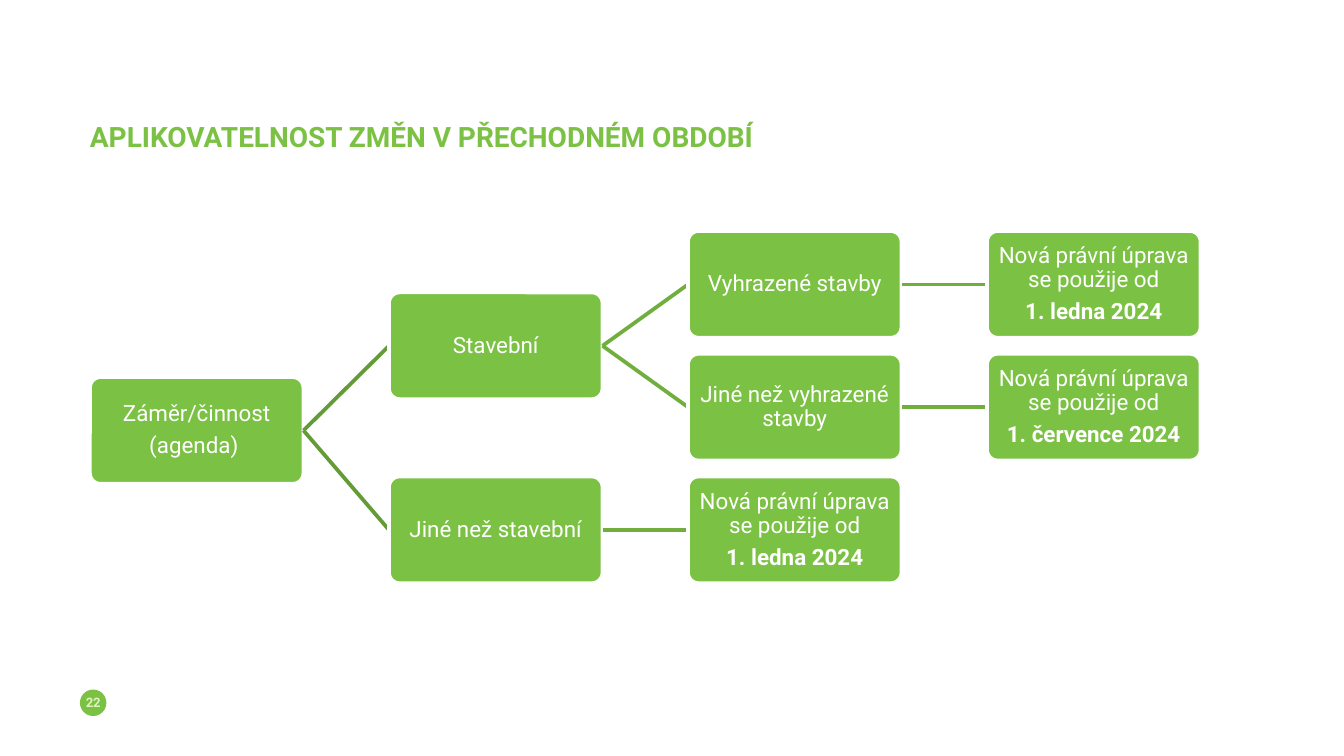
from dataclasses import dataclass
from typing import Optional

from lxml import etree
from pptx import Presentation
from pptx import util as u
from pptx.dml.color import RGBColor
from pptx.enum import shapes, text
from pptx.oxml.ns import qn

COLORS = {"green": "7BC143", "white": "FFFFFF", "pale": "DFF5C0",
          "branch": "639B36", "twig": "70AF3D"}
LEFT, TOP, COL_STEP, ROW_STEP = 48.2, 123.8, 160.2, 65.75
BOX_W, BOX_H = 114.4, 57.2
BOX_PARA = {"alignment": text.PP_ALIGN.CENTER, "line_spacing": 0.9, "space_after": u.Pt(4.2)}
BOX_FRAME = {"word_wrap": True, "vertical_anchor": text.MSO_ANCHOR.MIDDLE,
             **{f"margin_{side}": u.Pt(0.7) for side in ("left", "top", "right", "bottom")}}
TITLE_FRAME = {**BOX_FRAME, "vertical_anchor": text.MSO_ANCHOR.TOP,
               **{f"margin_{side}": 0 for side in ("left", "top", "right", "bottom")}}
RULE = "Nová právní úprava se použije od"


@dataclass(frozen=True)
class Node:
    """A box of the tree, placed by column and row."""
    col: int
    row: float
    lines: tuple[str, ...]
    parent: Optional["Node"] = None
    date: str = ""

    @property
    def x(self) -> float:
        """Return the left edge in points."""
        return LEFT + self.col * COL_STEP

    @property
    def y(self) -> float:
        """Return the top edge in points."""
        return TOP + self.row * ROW_STEP


def rgb(name: str) -> RGBColor:
    """Return a named colour."""
    return RGBColor.from_string(COLORS[name])


def apply(obj, values: dict) -> None:
    """Set attributes from a dict of format values."""
    for key, value in values.items():
        setattr(obj, key, value)


def write(p, words: str, size: float, color: str, bold: bool = False) -> None:
    """Add one formatted run to a paragraph."""
    r = p.add_run()
    r.text = words
    apply(r.font, {"name": "Roboto", "size": u.Pt(size), "bold": bold})
    r.font.color.rgb = rgb(color)


def add_label(s, at: tuple, words: str, size: float, color: str, frame: dict, para: dict) -> None:
    """Add a bold one-line text box."""
    tf = s.shapes.add_textbox(*map(u.Pt, at)).text_frame
    apply(tf, frame)
    apply(tf.paragraphs[0], para)
    write(tf.paragraphs[0], words, size, color, True)


def add_link(s, parent: Node, child: Node) -> None:
    """Draw the line from a parent box to its child."""
    ends = (parent.x + BOX_W, parent.y + BOX_H / 2, child.x, child.y + BOX_H / 2)
    sp = s.shapes.add_connector(shapes.MSO_CONNECTOR.STRAIGHT, *map(u.Pt, ends))
    sp.line.color.rgb = rgb("twig" if parent.col else "branch")
    sp.line.width = u.Pt(2)
    etree.SubElement(sp._element.spPr, qn("a:effectLst"))


def add_node(s, node: Node) -> None:
    """Draw a box with its text, and the line leading to it."""
    if node.parent:
        add_link(s, node.parent, node)
    sp = s.shapes.add_shape(shapes.MSO_SHAPE.ROUNDED_RECTANGLE,
                            *map(u.Pt, (node.x, node.y, BOX_W, BOX_H)))
    sp.adjustments[0] = 0.1
    sp.shadow.inherit = False
    sp.fill.solid()
    sp.fill.fore_color.rgb = rgb("green")
    sp.line.color.rgb = rgb("white")
    sp.line.width = u.Pt(2)
    tf = sp.text_frame
    apply(tf, BOX_FRAME)
    lines = [(line, False) for line in node.lines]
    if node.date:
        lines.append((node.date, True))
    for i, (words, bold) in enumerate(lines):
        p = tf.add_paragraph() if i else tf.paragraphs[0]
        apply(p, BOX_PARA)
        write(p, words, 12, "white", bold)


def add_page_number(s, number: str) -> None:
    """Draw the slide number on its disc."""
    sp = s.shapes.add_shape(shapes.MSO_SHAPE.OVAL, *map(u.Pt, (42.8, 369.4, 14.2, 14.2)))
    sp.shadow.inherit = False
    sp.fill.solid()
    sp.fill.fore_color.rgb = rgb("green")
    sp.line.fill.background()
    add_label(s, (36, 368.6, 28, 15.6), number, 7, "pale", {"word_wrap": True},
              {"alignment": text.PP_ALIGN.CENTER})


def main() -> None:
    """Build the slide and save it."""
    prs = Presentation()
    apply(prs, {"slide_width": u.Pt(720), "slide_height": u.Pt(405)})
    s = prs.slides.add_slide(prs.slide_layouts[6])
    add_page_number(s, "22")
    add_label(s, (48.2, 64.1, 471, 25), "APLIKOVATELNOST ZMĚN V PŘECHODNÉM OBDOBÍ",
              15, "green", TITLE_FRAME, {})

    agenda = Node(0, 1.19, ("Záměr/činnost", "(agenda) "))
    building = Node(1, 0.5, ("Stavební",), agenda)
    reserved = Node(2, 0, ("Vyhrazené stavby",), building)
    unreserved = Node(2, 1, ("Jiné než vyhrazené stavby",), building)
    other = Node(1, 2, ("Jiné než stavební",), agenda)
    for node in (agenda, building,
                 reserved, Node(3, 0, (RULE,), reserved, "1. ledna 2024"),
                 unreserved, Node(3, 1, (RULE,), unreserved, "1. července 2024"),
                 other, Node(2, 2, (RULE,), other, "1. ledna 2024")):
        add_node(s, node)
    prs.save("out.pptx")


if __name__ == "__main__":
    main()
